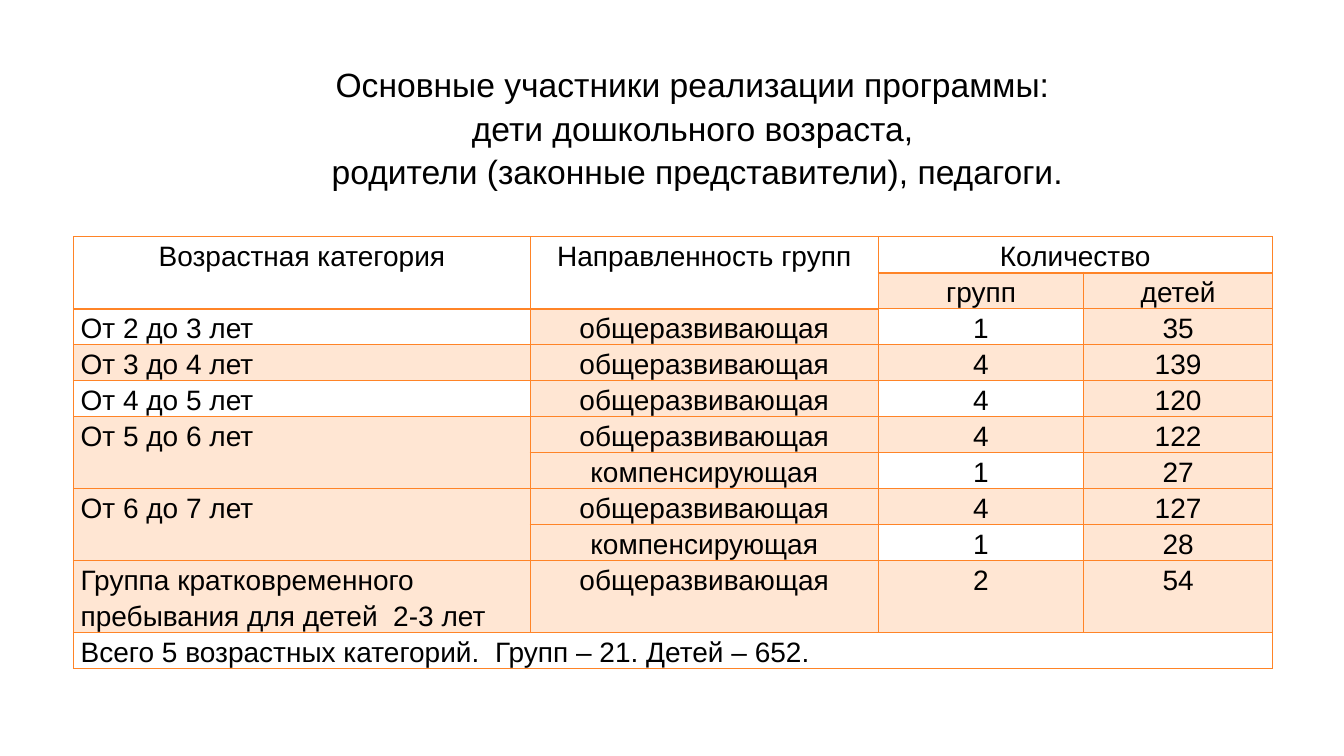
import pptx
import pptx.util
import pptx.dml.color
import pptx.enum.text
import lxml.etree

ALIGN = pptx.enum.text.PP_ALIGN
ORANGE = "FF8427"
NS = "http://schemas.openxmlformats.org/drawingml/2006/main"
TITLE = [
    "Основные участники реализации программы: ",
    "дети дошкольного возраста, ",
    "родители (законные представители), педагоги.",
]
BASE = "общеразвивающая"
SPECIAL = "компенсирующая"
ROWS = [
    ("Возрастная категория", "Направленность групп", "Количество", ""),
    ("", "", "групп", "детей"),
    ("От 2 до 3 лет", BASE, "1", "35"),
    ("От 3 до 4 лет", BASE, "4", "139"),
    ("От 4 до 5 лет", BASE, "4", "120"),
    ("От 5 до 6 лет", BASE, "4", "122"),
    ("", SPECIAL, "1", "27"),
    ("От 6 до 7 лет", BASE, "4", "127"),
    ("", SPECIAL, "1", "28"),
    ("Группа кратковременного пребывания для детей  2-3 лет", BASE, "2", "54"),
    ("Всего 5 возрастных категорий.  Групп – 21. Детей – 652.", "", "", ""),
]
LAST = len(ROWS) - 1
WIDTHS = [4.53, 3.45, 2.04, 1.87]
LINES = [2 if row == LAST - 1 else 1 for row in range(len(ROWS))]
MERGES = [
    ((0, 0), (1, 0)), ((0, 1), (1, 1)), ((0, 2), (0, 3)),
    ((5, 0), (6, 0)), ((7, 0), (8, 0)), ((LAST, 0), (LAST, 3)),
]


def color(text):
    return pptx.dml.color.RGBColor.from_string(text)


def style(para, size, align, space):
    para.alignment = align
    para.line_spacing = space
    for run in para.runs:
        run.font.size = pptx.util.Pt(size)
        run.font.name = "Arial"
        run.font.bold = False
        run.font.color.rgb = color("000000")


def add_title(slide, box):
    shape = slide.shapes.title
    shape.left, shape.top, shape.width, shape.height = map(pptx.util.Inches, box)
    frame = shape.text_frame
    frame.text = "\n".join(TITLE)
    frame.word_wrap = True
    frame.auto_size = pptx.enum.text.MSO_AUTO_SIZE.NONE
    frame.vertical_anchor = pptx.enum.text.MSO_ANCHOR.MIDDLE
    for para in frame.paragraphs:
        para._p.get_or_add_pPr().set("indent", str(pptx.util.Inches(0.49)))
        style(para, 24, ALIGN.CENTER, 1.08)


def add_edges(cell, head):
    props = cell._tc.get_or_add_tcPr()
    for side in "LRTB":
        width = 2 if head and side == "B" else 1
        line = lxml.etree.SubElement(props, f"{{{NS}}}ln{side}", w=str(pptx.util.Pt(width)))
        fill = lxml.etree.SubElement(line, f"{{{NS}}}solidFill")
        lxml.etree.SubElement(fill, f"{{{NS}}}srgbClr", val=ORANGE)


def add_fill(cell, plain):
    if plain:
        cell.fill.background()
        return
    cell.fill.solid()
    cell.fill.fore_color.rgb = color(ORANGE)
    tint = cell._tc.tcPr.find(f"{{{NS}}}solidFill/{{{NS}}}srgbClr")
    lxml.etree.SubElement(tint, f"{{{NS}}}alpha", val="20000")


def set_cell(cell, row, col, text):
    cell.text = text
    cell.margin_left = cell.margin_right = pptx.util.Inches(0.07)
    cell.margin_top = cell.margin_bottom = 0
    align = ALIGN.CENTER
    if col == 0 and row > 1:
        align = ALIGN.LEFT if LINES[row] > 1 else ALIGN.JUSTIFY
    style(cell.text_frame.paragraphs[0], 20, align, 1.15)
    add_edges(cell, row == 0)
    even = row % 2 == 0 and col % 2 == 0
    add_fill(cell, row in (0, LAST) or even)


def add_groups(slide, box):
    place = map(pptx.util.Inches, box)
    table = slide.shapes.add_table(len(ROWS), len(WIDTHS), *place).table
    table.first_row = False
    table.horz_banding = False
    for col, width in enumerate(WIDTHS):
        table.columns[col].width = pptx.util.Inches(box[2] * width / sum(WIDTHS))
    for row, texts in enumerate(ROWS):
        table.rows[row].height = pptx.util.Inches(box[3] * LINES[row] / sum(LINES))
        for col, text in enumerate(texts):
            set_cell(table.cell(row, col), row, col, text)
    for start, end in MERGES:
        table.cell(*start).merge(table.cell(*end))


def main():
    deck = pptx.Presentation()
    deck.slide_width = pptx.util.Inches(13.33)
    deck.slide_height = pptx.util.Inches(7.5)
    slide = deck.slides.add_slide(deck.slide_layouts[5])
    add_title(slide, (2.66, 0.57, 8.02, 1.36))
    add_groups(slide, (0.73, 2.35, 11.89, 4.27))
    deck.save("out.pptx")


if __name__ == "__main__":
    main()
